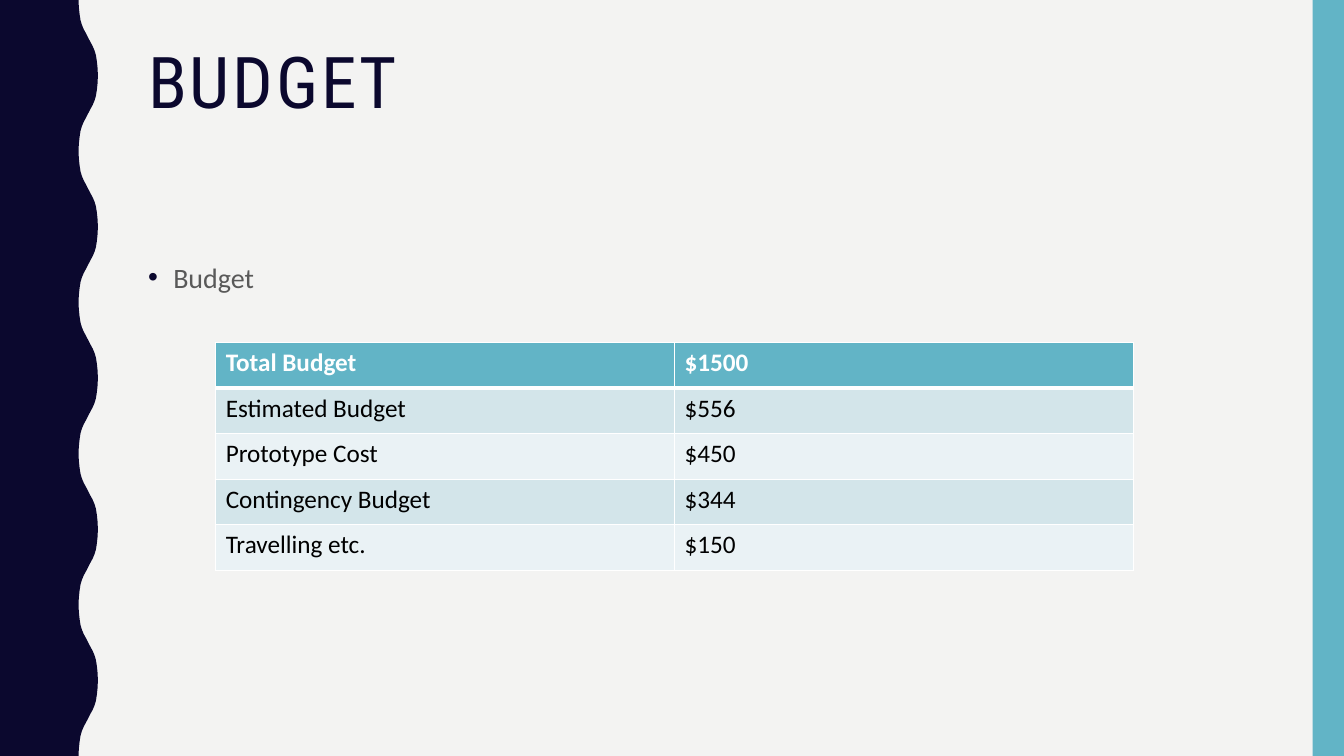
"""Builds a budget slide with a wavy side band, a title, a bullet and a table."""
from dataclasses import dataclass

from lxml.etree import SubElement
from pptx import Presentation
from pptx.dml.color import RGBColor
from pptx.enum.shapes import MSO_SHAPE
from pptx.enum.text import MSO_ANCHOR
from pptx.oxml.ns import qn
from pptx.shapes.autoshape import Shape
from pptx.slide import Slide
from pptx.table import _Cell
from pptx.text.text import _Paragraph
from pptx.util import Inches, Pt

SLIDE_WIDTH = Inches(13.33)
SLIDE_HEIGHT = Inches(7.5)


@dataclass(frozen=True)
class Theme:
    background: str = "F3F3F2"
    navy: str = "0B082E"
    teal: str = "62B4C6"
    gray: str = "595959"
    white: str = "FFFFFF"
    black: str = "000000"
    bands: tuple[str, str] = ("D3E5EA", "EAF2F5")
    heading_font: str = "Roboto Condensed"
    body_font: str = "Calibri"
    title_size: int = 51
    body_size: int = 20
    table_size: int = 18


@dataclass(frozen=True)
class TextStyle:
    font: str
    size: int
    color: str
    bold: bool = False
    spacing: int = 0


@dataclass(frozen=True)
class Area:
    """A rectangle in percent of the slide's width and height."""
    left: float
    top: float
    width: float
    height: float

    def box(self) -> tuple[int, int, int, int]:
        return across(self.left), down(self.top), across(self.width), down(self.height)


@dataclass(frozen=True)
class BudgetLine:
    label: str
    amount: str


THEME = Theme()
TITLE_STYLE = TextStyle(THEME.heading_font, THEME.title_size, THEME.navy, spacing=2)
BULLET_STYLE = TextStyle(THEME.body_font, THEME.body_size, THEME.gray)
HEADER_STYLE = TextStyle(THEME.body_font, THEME.table_size, THEME.white, bold=True)
CELL_STYLE = TextStyle(THEME.body_font, THEME.table_size, THEME.black)

SIDE_BAR = Area(97.67, 0, 2.33, 100)
TITLE_AREA = Area(10.28, 5.6, 83.5, 21.73)
BODY_AREA = Area(10.28, 33.33, 83.5, 52.4)
TABLE_AREA = Area(16.05, 45.33, 68.27, 30.13)

WAVE_TROUGH, WAVE_CREST, HALF_WAVES = 5.85, 7.28, 10
WAVE_START = [(0, 0), (0.01, 0.09), (0.05, 0.19), (0.1, 0.27),
              (0.17, 0.33), (0.27, 0.39), (0.38, 0.44)]
WAVE_PROFILE = WAVE_START + [(0.5, 0.5)] + [(1 - x, 1 - y) for x, y in reversed(WAVE_START)]

BUDGET = [
    BudgetLine("Total Budget", "$1500"),
    BudgetLine("Estimated Budget", "$556"),
    BudgetLine("Prototype Cost", "$450"),
    BudgetLine("Contingency Budget", "$344"),
    BudgetLine("Travelling etc.", "$150"),
]


def across(percent: float) -> int:
    return round(SLIDE_WIDTH * percent / 100)


def down(percent: float) -> int:
    return round(SLIDE_HEIGHT * percent / 100)


def paint(shape: Shape, color: str) -> None:
    shape.shadow.inherit = False
    shape.fill.solid()
    shape.fill.fore_color.rgb = RGBColor.from_string(color)
    shape.line.fill.background()


def add_wave(slide: Slide) -> None:
    row = 100 / HALF_WAVES
    points = []
    for half in range(HALF_WAVES):
        for reach, descent in WAVE_PROFILE:
            swing = 1 - reach if half % 2 else reach
            x = WAVE_TROUGH + swing * (WAVE_CREST - WAVE_TROUGH)
            points.append((across(x), down((half + descent) * row)))
    builder = slide.shapes.build_freeform(0, 0)
    builder.add_line_segments(points + [(0, SLIDE_HEIGHT)], close=True)
    paint(builder.convert_to_shape(), THEME.navy)


def add_run(paragraph: _Paragraph, text: str, style: TextStyle) -> None:
    run = paragraph.add_run()
    run.text = text
    run.font.name = style.font
    run.font.size = Pt(style.size)
    run.font.bold = style.bold
    run.font.color.rgb = RGBColor.from_string(style.color)
    if style.spacing:
        run.font._element.set("spc", str(style.spacing * 100))


def add_text(slide: Slide, area: Area, text: str, style: TextStyle, leading: float) -> _Paragraph:
    frame = slide.shapes.add_textbox(*area.box()).text_frame
    frame.word_wrap = True
    frame.vertical_anchor = MSO_ANCHOR.TOP
    paragraph = frame.paragraphs[0]
    paragraph.line_spacing = leading
    add_run(paragraph, text, style)
    return paragraph


def add_bullet(paragraph: _Paragraph, color: str) -> None:
    paragraph.space_before = Pt(7)
    properties = paragraph._p.get_or_add_pPr()
    properties.set("marL", str(Inches(0.25)))
    properties.set("indent", str(-Inches(0.25)))
    bullet_color = SubElement(properties, qn("a:buClr"))
    SubElement(bullet_color, qn("a:srgbClr"), val=color)
    SubElement(properties, qn("a:buFont"), typeface="Arial")
    SubElement(properties, qn("a:buChar"), char="•")


def fill_cell(cell: _Cell, text: str, row: int) -> None:
    is_header = row == 0
    add_run(cell.text_frame.paragraphs[0], text, HEADER_STYLE if is_header else CELL_STYLE)
    properties = cell._tc.get_or_add_tcPr()
    widths = {"L": 1, "R": 1, "T": 3 if row == 1 else 1, "B": 3 if is_header else 1}
    for side, width in widths.items():
        line = SubElement(properties, qn(f"a:ln{side}"), w=str(Pt(width)))
        solid = SubElement(line, qn("a:solidFill"))
        SubElement(solid, qn("a:srgbClr"), val=THEME.white)
    cell.fill.solid()
    color = THEME.teal if is_header else THEME.bands[(row - 1) % 2]
    cell.fill.fore_color.rgb = RGBColor.from_string(color)


def add_budget_table(slide: Slide) -> None:
    table = slide.shapes.add_table(len(BUDGET), 2, *TABLE_AREA.box()).table
    for row, line in enumerate(BUDGET):
        for column, text in enumerate((line.label, line.amount)):
            fill_cell(table.cell(row, column), text, row)


def main() -> None:
    presentation = Presentation()
    presentation.slide_width = SLIDE_WIDTH
    presentation.slide_height = SLIDE_HEIGHT
    slide = presentation.slides.add_slide(presentation.slide_layouts[6])
    slide.background.fill.solid()
    slide.background.fill.fore_color.rgb = RGBColor.from_string(THEME.background)
    add_wave(slide)
    paint(slide.shapes.add_shape(MSO_SHAPE.RECTANGLE, *SIDE_BAR.box()), THEME.teal)
    add_text(slide, TITLE_AREA, "BUDGET", TITLE_STYLE, 0.9)
    add_bullet(add_text(slide, BODY_AREA, "Budget", BULLET_STYLE, 1.1), THEME.navy)
    add_budget_table(slide)
    presentation.save("out.pptx")


if __name__ == "__main__":
    main()
